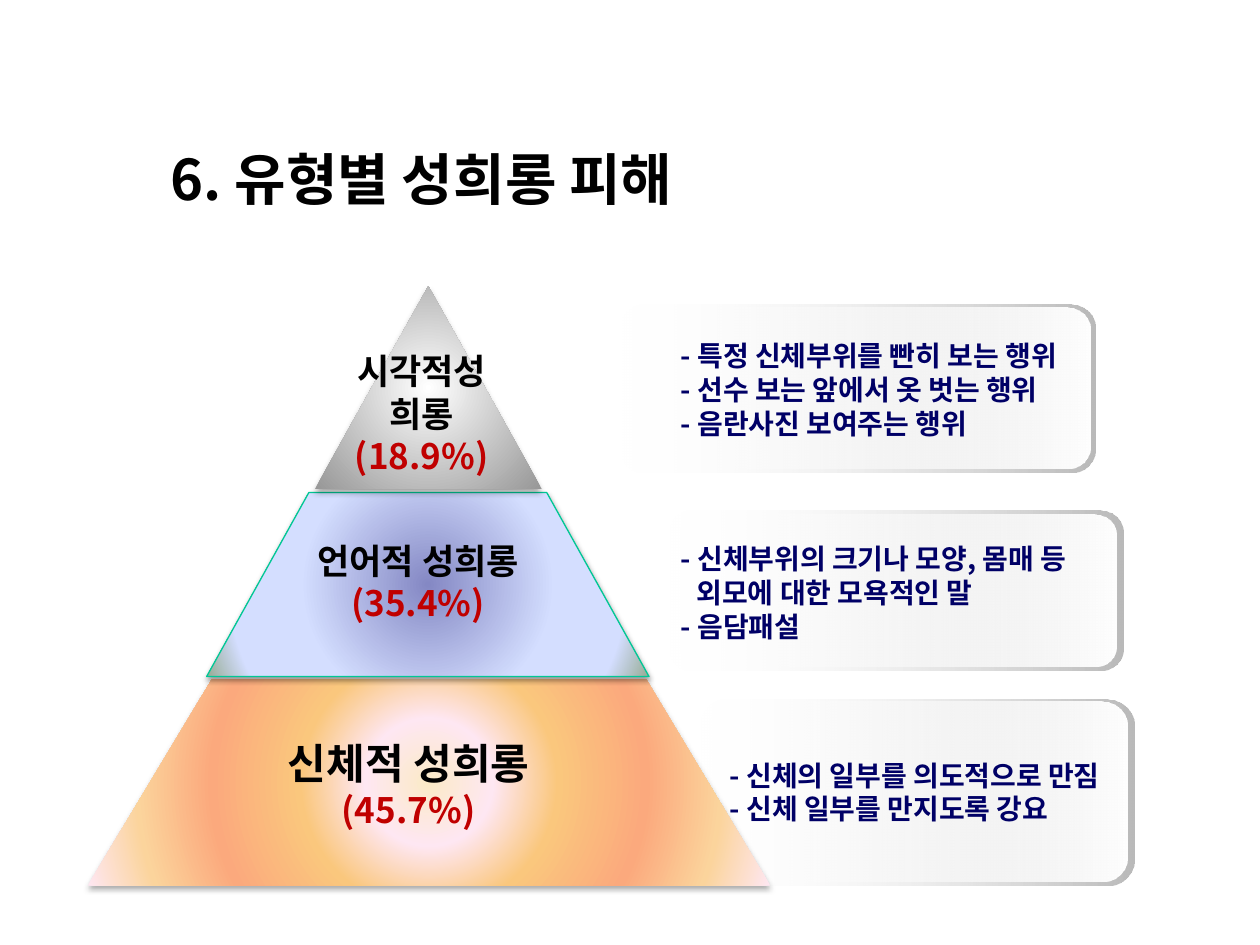
from dataclasses import dataclass

from lxml import etree
from pptx import Presentation
from pptx.dml.color import RGBColor
from pptx.enum.shapes import MSO_SHAPE
from pptx.enum.text import MSO_ANCHOR, PP_ALIGN
from pptx.oxml.ns import qn
from pptx.util import Pt

ROUNDED, TRIANGLE = MSO_SHAPE.ROUNDED_RECTANGLE, MSO_SHAPE.ISOSCELES_TRIANGLE
LEFT, CENTER = PP_ALIGN.LEFT, PP_ALIGN.CENTER
MIDDLE = MSO_ANCHOR.MIDDLE


@dataclass(frozen=True)
class Theme:
    """Fonts, sizes and colours of the slide."""
    font: str = "Noto Sans CJK KR"
    title: int = 32
    large: int = 24
    label: int = 20
    body: int = 16
    leading: float = 1.2
    ink: str = "000000"
    navy: str = "000066"
    red: str = "C00000"
    outline: str = "00C896"
    rim: tuple = ((0, "FFFFFF", 0), (100, "BABABA", 100))
    face: tuple = ((0, "FFFFFF", 0), (100, "FFFFFF", 100))
    gray: tuple = ((0, "FFFFFF", 100), (100, "979797", 100))
    blue: tuple = ((0, "8488C4", 100), (53, "D4DEFF", 100),
                   (83, "D4DEFF", 100), (100, "96AB94", 100))
    orange: tuple = ((0, "FBEAC7", 100), (18, "FEE7F2", 100),
                     (36, "FAC77D", 100), (61, "FBA97D", 100),
                     (82, "FBD49C", 100), (100, "FEE7F2", 100))


T = Theme()

CARDS = [
    ((354, 174, 272, 96), (361, 176, 262, 92), (382, 186, 234, 73),
     [("- 특정 신체부위를 빤히 보는 행위", 0),
      ("- 선수 보는 앞에서 옷 벗는 행위", 0),
      ("- 음란사진 보여주는 행위", 0)]),
    ((382, 292, 260, 91), (388, 294, 250, 87), (382, 298, 248, 81),
     [("- 신체부위의 크기나 모양, 몸매 등", 0),
      ("외모에 대한 모욕적인 말", 9),
      ("- 음담패설", 0)]),
    ((400, 400, 248, 106), (405, 401, 239, 103), (410, 416, 234, 73),
     [("- 신체의 일부를 의도적으로 만짐", 0),
      ("- 신체 일부를 만지도록 강요", 0)]),
]

LABELS = [
    ((191.5, 208, 99, 56), "시각적성희롱", T.label, "(18.9%)"),
    ((174, 315, 130, 34), "언어적 성희롱", T.label, "(35.4%)"),
    ((135, 428, 197, 40), "신체적 성희롱", T.large, "(45.7%)"),
]


def pts(values):
    """Turn numbers into point lengths."""
    return [Pt(v) for v in values]


def sub(parent, tag, **attrs):
    """Add a DrawingML child element."""
    return etree.SubElement(parent, qn(f"a:{tag}"),
                            {k: str(v) for k, v in attrs.items()})


def paint(sp, stops, radial):
    """Give a shape a gradient fill without line or shadow."""
    sp.shadow.inherit = False
    sp.line.fill.background()
    grad = etree.Element(qn("a:gradFill"), rotWithShape="1")
    stop_list = sub(grad, "gsLst")
    for pos, color, opacity in stops:
        stop = sub(stop_list, "gs", pos=pos * 1000)
        clr = sub(stop, "srgbClr", val=color)
        if opacity < 100:
            sub(clr, "alpha", val=opacity * 1000)
    if radial:
        way = sub(grad, "path", path="circle")
        sub(way, "fillToRect", l=50000, t=50000, r=50000, b=50000)
    else:
        sub(grad, "lin", ang=0, scaled=0)
    sp._element.spPr.insert(2, grad)


def add_shadow(sp, opacity, blur, dist):
    """Drop a soft black shadow below a shape."""
    effects = sp._element.spPr.find(qn("a:effectLst"))
    shadow = sub(effects, "outerShdw", blurRad=Pt(blur), dist=Pt(dist),
                 dir=5400000, algn="t", rotWithShape=0)
    sub(sub(shadow, "srgbClr", val="000000"), "alpha", val=opacity * 1000)


def write(tf, lines, align):
    """Fill a text frame with (text, size, colour, indent) lines."""
    tf.word_wrap = False
    tf.vertical_anchor = MIDDLE
    for i, (text, size, color, indent) in enumerate(lines):
        p = tf.add_paragraph() if i else tf.paragraphs[0]
        p.text = text
        p.alignment = align
        p.line_spacing = Pt(size * T.leading)
        p.font.size = Pt(size)
        p.font.bold = True
        p.font.color.rgb = RGBColor.from_string(color)
        p.font.name = T.font
        pPr = p._p.get_or_add_pPr()
        sub(pPr.find(qn("a:defRPr")), "ea", typeface=T.font)
        if indent:
            pPr.set("marL", str(Pt(indent)))


def add_title(s, text):
    """Place and format the slide title."""
    title = s.shapes.title
    title.left, title.top, title.width, title.height = pts((14, 83, 454, 37))
    tf = title.text_frame
    tf.margin_left = tf.margin_right = Pt(19)
    write(tf, [(text, T.title, T.ink, 0)], CENTER)


def add_card(s, rim, face, box, lines):
    """Add a fading rounded card with its description."""
    group = s.shapes.add_group_shape()
    for frame, stops in ((rim, T.rim), (face, T.face)):
        sp = group.shapes.add_shape(ROUNDED, *pts(frame))
        sp.adjustments[0] = 0.145
        paint(sp, stops, False)
    tf = s.shapes.add_textbox(*pts(box)).text_frame
    write(tf, [(text, T.body, T.navy, indent) for text, indent in lines], LEFT)


def add_band(s, center, top, bottom, half_top, half_bottom, stops):
    """Add one symmetrical trapezoid of the pyramid."""
    corners = [(center - half_bottom, bottom), (center - half_top, top),
               (center + half_top, top), (center + half_bottom, bottom)]
    start, *rest = [pts(corner) for corner in corners]
    builder = s.shapes.build_freeform(*start)
    builder.add_line_segments(rest, close=True)
    sp = builder.convert_to_shape()
    paint(sp, stops, True)
    return sp


def add_label(s, box, name, size, share):
    """Add a level's name and share."""
    tf = s.shapes.add_textbox(*pts(box)).text_frame
    write(tf, [(name, size, T.ink, 0), (share, T.label, T.red, 0)], CENTER)


def main():
    """Build the slide."""
    prs = Presentation()
    prs.slide_width, prs.slide_height = Pt(720), Pt(540)
    s = prs.slides.add_slide(prs.slide_layouts[5])
    add_title(s, "6. 유형별 성희롱 피해")
    for card in CARDS:
        add_card(s, *card)
    bottom = add_band(s, 245.2, 388, 506, 124, 195, T.orange)
    add_shadow(bottom, 32, 3.5, 2.2)
    middle = add_band(s, 244.5, 281.5, 386.6, 68, 126.4, T.blue)
    middle.line.color.rgb = RGBColor.from_string(T.outline)
    middle.line.width = Pt(0.75)
    add_shadow(middle, 38, 3.1, 1.6)
    top = s.shapes.add_shape(TRIANGLE, *pts((180, 163.5, 129.6, 116)))
    paint(top, T.gray, True)
    add_shadow(top, 32, 3.5, 2.2)
    for label in LABELS:
        add_label(s, *label)
    prs.save("out.pptx")


if __name__ == "__main__":
    main()
